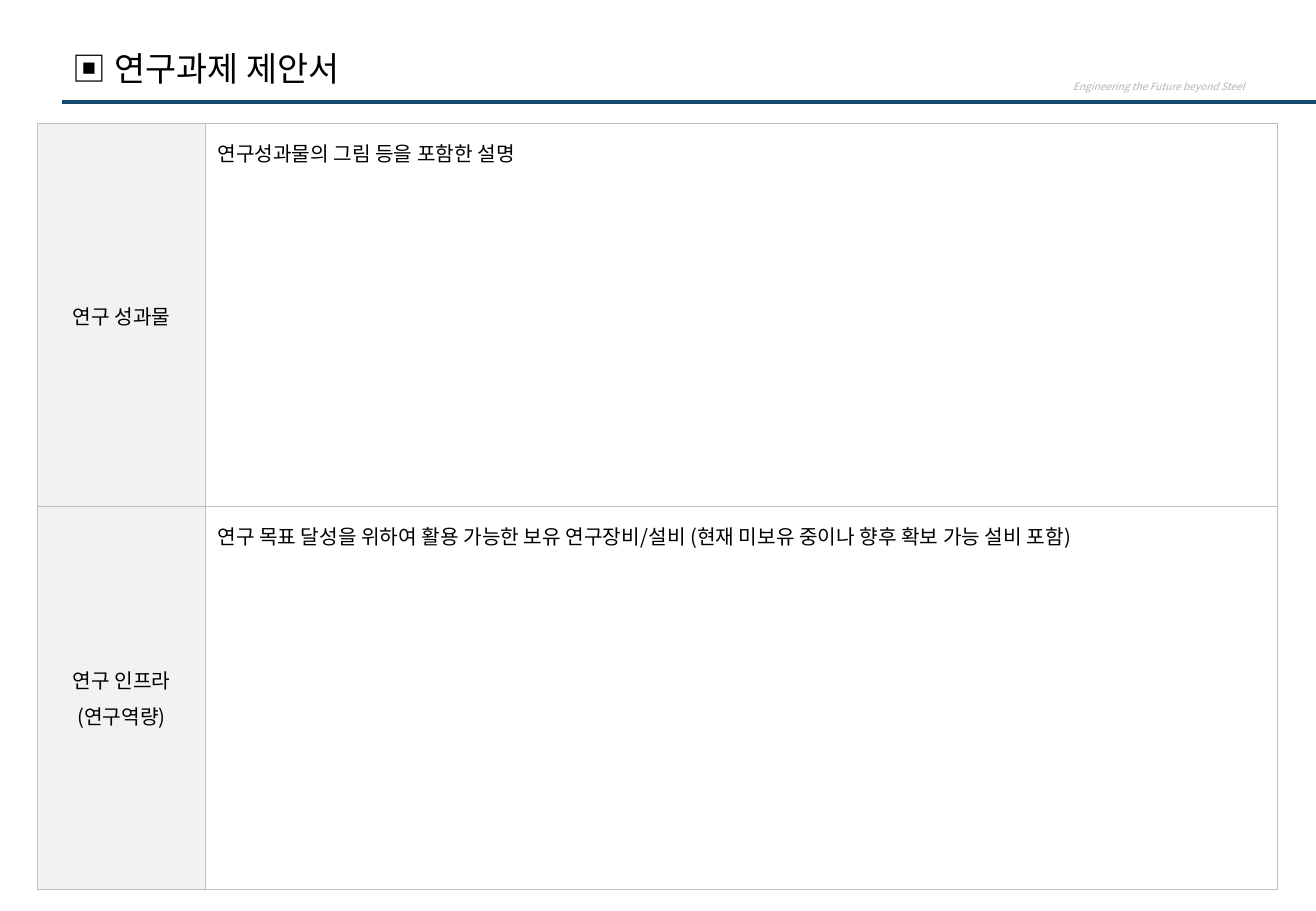
from dataclasses import dataclass

from lxml import etree
from pptx import Presentation
from pptx import util as u
from pptx.dml.color import RGBColor
from pptx.enum import shapes, text
from pptx.oxml import ns


@dataclass(frozen=True)
class Theme:
    font: str = "Noto Sans CJK KR"
    ink: str = "000000"
    muted: str = "B4B4B4"
    rule: str = "17496F"
    border: str = "BFBFBF"
    label_fill: str = "F2F2F2"
    body_fill: str = "FFFFFF"
    title_size: float = 20
    body_size: float = 12
    tagline_size: float = 6
    rule_width: float = 2.25
    border_width: float = 0.75
    paragraph_gap: float = 4


THEME = Theme()
TITLE = "▣ 연구과제 제안서"
TAGLINE = "Engineering the Future beyond Steel"
SECTIONS = [
    (["연구 성과물"], ["연구성과물의 그림 등을 포함한 설명"]),
    (
        ["연구 인프라", "(연구역량)"],
        ["연구 목표 달성을 위하여 활용 가능한 보유 연구장비/설비 (현재 미보유 중이나 향후 확보 가능 설비 포함)"],
    ),
]
COLUMN_WIDTHS = [1.38, 8.82]
ROW_HEIGHT = 3.15

LABEL_FORMAT = {"vertical_anchor": text.MSO_ANCHOR.MIDDLE}
BODY_FORMAT = {
    "vertical_anchor": text.MSO_ANCHOR.TOP,
    "margin_left": u.Inches(0.1),
    "margin_top": u.Inches(0.12),
    "margin_right": u.Inches(0.1),
    "margin_bottom": u.Inches(0.05),
}


def apply(target, values):
    for name, value in values.items():
        setattr(target, name, value)


def write(frame, lines, size, color, align, italic=False):
    """Fill a text frame with one formatted paragraph for each line."""
    for index, line in enumerate(lines):
        paragraph = frame.add_paragraph() if index else frame.paragraphs[0]
        paragraph.alignment = align
        paragraph.space_before = u.Pt(THEME.paragraph_gap if index else 0)
        run = paragraph.add_run()
        run.text = line
        apply(run.font, {"name": THEME.font, "size": u.Pt(size), "bold": False, "italic": italic})
        run.font.color.rgb = RGBColor.from_string(color)
        east_asian = etree.SubElement(run.font._element, ns.qn("a:ea"))
        east_asian.set("typeface", THEME.font)


def add_title(slide):
    title = slide.shapes.title
    apply(title, {
        "left": u.Inches(0.5), "top": u.Inches(0.29),
        "width": u.Inches(6.26), "height": u.Inches(0.54),
    })
    apply(title.text_frame, {
        "word_wrap": True,
        "auto_size": text.MSO_AUTO_SIZE.NONE,
        "vertical_anchor": text.MSO_ANCHOR.MIDDLE,
    })
    write(title.text_frame, [TITLE], THEME.title_size, THEME.ink, text.PP_ALIGN.LEFT)


def add_tagline(slide):
    tagline = slide.shapes.add_textbox(u.Inches(8.73), u.Inches(0.61), u.Inches(1.61), u.Inches(0.2))
    tagline.text_frame.word_wrap = False
    write(tagline.text_frame, [TAGLINE], THEME.tagline_size, THEME.muted, text.PP_ALIGN.RIGHT, italic=True)


def add_header_rule(slide, right):
    y = u.Inches(0.84)
    rule = slide.shapes.add_connector(shapes.MSO_CONNECTOR.STRAIGHT, u.Inches(0.51), y, right, y)
    rule.line.color.rgb = RGBColor.from_string(THEME.rule)
    rule.line.width = u.Pt(THEME.rule_width)
    etree.SubElement(rule._element.spPr, ns.qn("a:effectLst"))


def set_borders(cell):
    properties = cell._tc.get_or_add_tcPr()
    for index, side in enumerate(("lnL", "lnR", "lnT", "lnB")):
        border = etree.Element(ns.qn(f"a:{side}"), w=str(u.Pt(THEME.border_width)))
        fill = etree.SubElement(border, ns.qn("a:solidFill"))
        etree.SubElement(fill, ns.qn("a:srgbClr"), val=THEME.border)
        properties.insert(index, border)


def fill_cell(cell, lines, fill, align, cell_format):
    apply(cell, cell_format)
    cell.fill.solid()
    cell.fill.fore_color.rgb = RGBColor.from_string(fill)
    set_borders(cell)
    write(cell.text_frame, lines, THEME.body_size, THEME.ink, align)


def add_proposal_table(slide):
    proposal = slide.shapes.add_table(
        len(SECTIONS), len(COLUMN_WIDTHS), u.Inches(0.31), u.Inches(1.02),
        u.Inches(sum(COLUMN_WIDTHS)), u.Inches(ROW_HEIGHT * len(SECTIONS)),
    ).table
    apply(proposal, {"first_row": False, "horz_banding": False})
    for column, width in zip(proposal.columns, COLUMN_WIDTHS):
        column.width = u.Inches(width)
    for row, (label, description) in zip(proposal.rows, SECTIONS):
        row.height = u.Inches(ROW_HEIGHT)
        label_cell, description_cell = row.cells
        fill_cell(label_cell, label, THEME.label_fill, text.PP_ALIGN.CENTER, LABEL_FORMAT)
        fill_cell(description_cell, description, THEME.body_fill, text.PP_ALIGN.LEFT, BODY_FORMAT)


def main():
    deck = Presentation()
    apply(deck, {"slide_width": u.Inches(10.83), "slide_height": u.Inches(7.5)})
    slide = deck.slides.add_slide(deck.slide_layouts.get_by_name("Title Only"))
    add_tagline(slide)
    add_header_rule(slide, deck.slide_width)
    add_title(slide)
    add_proposal_table(slide)
    deck.save("out.pptx")


if __name__ == "__main__":
    main()
